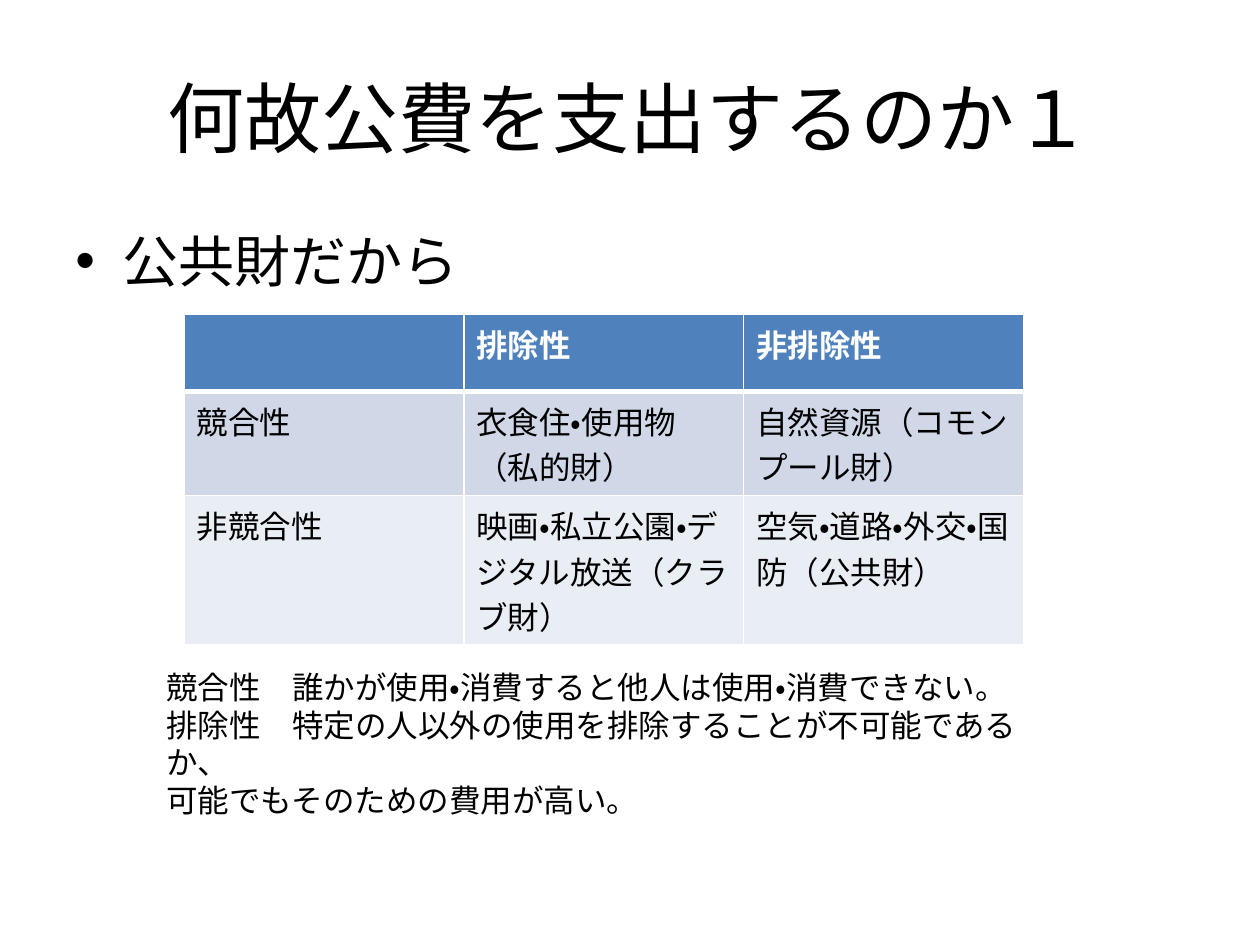
from lxml import etree
from pptx import Presentation
from pptx import util as u
from pptx.dml import color
from pptx.enum import lang, text
from pptx.oxml import ns

TITLE = "何故公費を支出するのか１"
REASON = "公共財だから"
GOODS = [
    ["", "排除性", "非排除性"],
    ["競合性", "衣食住・使用物（私的財）", "自然資源（コモンプール財）"],
    ["非競合性", "映画・私立公園・デジタル放送（クラブ財）", "空気・道路・外交・国防（公共財）"],
]
DEFINITIONS = [
    "競合性　誰かが使用・消費すると他人は使用・消費できない。",
    "排除性　特定の人以外の使用を排除することが不可能であるか、",
    "可能でもそのための費用が高い。",
]
ROW_FILLS = ["4F81BD", "D0D8E8", "E9EDF4"]
ROW_HEIGHTS = [1.55, 2.1, 3]
COLUMN_WIDTH = 5.64


def rgb(value):
    return color.RGBColor.from_string(value)


def apply(target, values):
    for name, value in values.items():
        setattr(target, name, value)


def write(frame, lines, size, hex_color="000000", bold=False, **paragraph_format):
    for index, line in enumerate(lines):
        paragraph = frame.paragraphs[0] if index == 0 else frame.add_paragraph()
        apply(paragraph, paragraph_format)
        run = paragraph.add_run()
        run.text = line
        apply(run.font, {
            "name": "Calibri",
            "size": u.Pt(size),
            "bold": bold,
            "language_id": lang.MSO_LANGUAGE_ID.JAPANESE,
        })
        run.font.color.rgb = rgb(hex_color)


def add_text(slide, box, lines, size, anchor=text.MSO_ANCHOR.TOP, **paragraph_format):
    shape = slide.shapes.add_textbox(*map(u.Cm, box))
    apply(shape.text_frame, {"word_wrap": True, "vertical_anchor": anchor})
    write(shape.text_frame, lines, size, **paragraph_format)
    return shape


def add_bullet(paragraph, indent):
    properties = paragraph._p.get_or_add_pPr()
    properties.set("marL", str(u.Cm(indent)))
    properties.set("indent", str(-u.Cm(indent)))
    etree.SubElement(properties, ns.qn("a:buFont")).set("typeface", "Arial")
    etree.SubElement(properties, ns.qn("a:buChar")).set("char", "•")


def set_borders(cell, hex_color, widths):
    properties = cell._tc.get_or_add_tcPr()
    for position, (side, width) in enumerate(widths.items()):
        line = etree.Element(ns.qn(f"a:ln{side}"), w=str(u.Pt(width)))
        fill = etree.SubElement(line, ns.qn("a:solidFill"))
        etree.SubElement(fill, ns.qn("a:srgbClr")).set("val", hex_color)
        properties.insert(position, line)


def add_goods_table(slide, left, top):
    column_count = len(GOODS[0])
    table = slide.shapes.add_table(
        len(GOODS), column_count, u.Cm(left), u.Cm(top),
        u.Cm(COLUMN_WIDTH * column_count), u.Cm(sum(ROW_HEIGHTS))).table
    for column in table.columns:
        column.width = u.Cm(COLUMN_WIDTH)
    for index, (labels, fill, height) in enumerate(zip(GOODS, ROW_FILLS, ROW_HEIGHTS)):
        table.rows[index].height = u.Cm(height)
        is_header = index == 0
        borders = {"L": 1, "R": 1, "T": 3 if index == 1 else 1, "B": 3 if is_header else 1}
        for cell, label in zip(table.rows[index].cells, labels):
            cell.fill.solid()
            cell.fill.fore_color.rgb = rgb(fill)
            set_borders(cell, "FFFFFF", borders)
            if label:
                write(cell.text_frame, [label], 18,
                      "FFFFFF" if is_header else "000000", is_header)


def main():
    presentation = Presentation()
    apply(presentation, {"slide_width": u.Cm(25.4), "slide_height": u.Cm(19.05)})
    slide = presentation.slides.add_slide(presentation.slide_layouts[6])
    add_text(slide, (1.27, 0.76, 22.86, 3.18), [TITLE], 44,
             text.MSO_ANCHOR.MIDDLE, alignment=text.PP_ALIGN.CENTER)
    reason = add_text(slide, (1.27, 4.45, 22.86, 12.57), [REASON], 32,
                      space_before=u.Pt(6.4))
    add_bullet(reason.text_frame.paragraphs[0], 0.95)
    add_goods_table(slide, 3.71, 6.34)
    add_text(slide, (3.1, 13.34, 18.01, 2.57), DEFINITIONS, 18)
    presentation.save("out.pptx")


if __name__ == "__main__":
    main()
